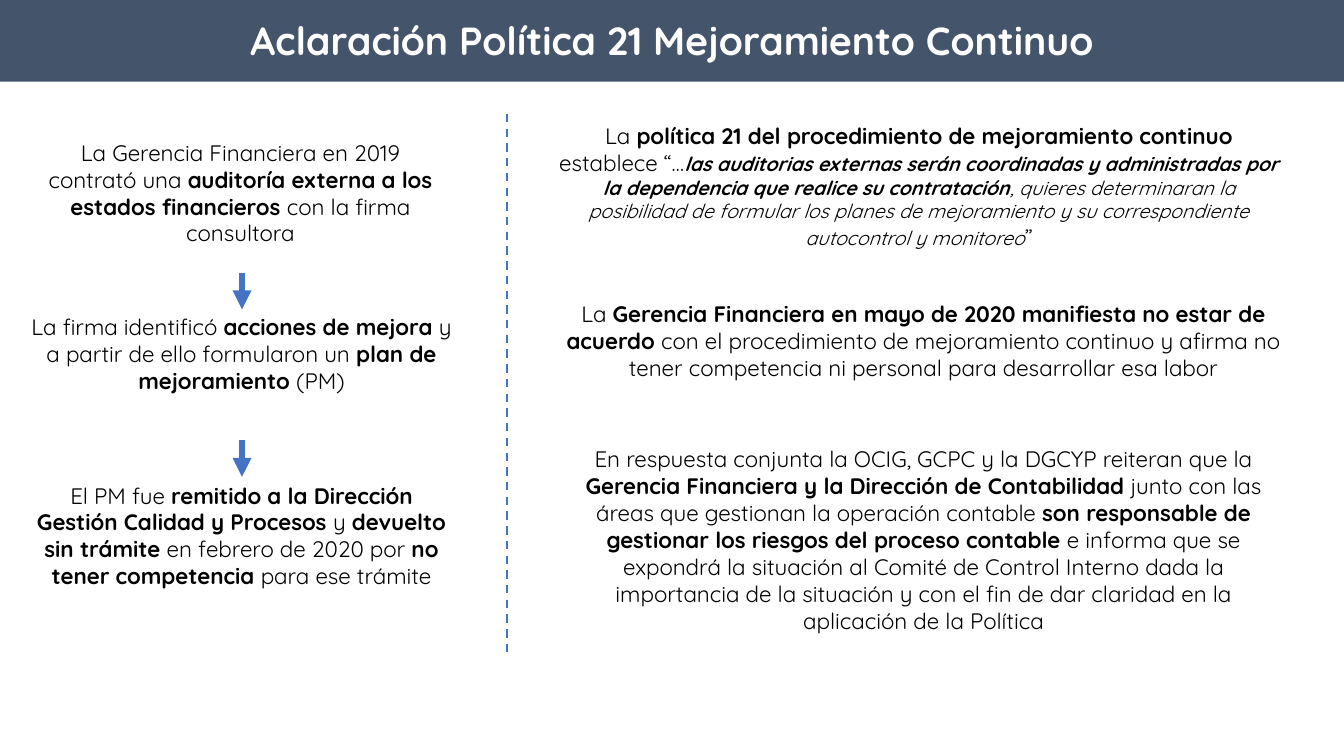
from lxml.etree import SubElement
from pptx import Presentation
from pptx.dml.color import RGBColor
from pptx.enum.dml import MSO_LINE
from pptx.enum.shapes import MSO_CONNECTOR
from pptx.enum.text import MSO_ANCHOR, MSO_AUTO_SIZE, PP_ALIGN
from pptx.oxml.ns import qn
from pptx.util import Inches, Pt

SLATE = RGBColor(0x44, 0x54, 0x6A)
BLUE = RGBColor(0x44, 0x72, 0xC4)
BLACK = RGBColor(0, 0, 0)
WHITE = RGBColor(255, 255, 255)
FONT = "Quicksand"


def add_run(paragraph, text, size, color, bold, italic=False):
    run = paragraph.add_run()
    run.text = text
    run.font.name = FONT
    run.font.size = Pt(size)
    run.font.color.rgb = color
    run.font.bold = bold
    run.font.italic = italic


def add_line(slide, x, top, bottom, width):
    line = slide.shapes.add_connector(
        MSO_CONNECTOR.STRAIGHT, Inches(x), Inches(top), Inches(x), Inches(bottom))
    line.line.color.rgb = BLUE
    line.line.width = Pt(width)
    SubElement(line._element.spPr, qn("a:effectLst"))
    return line


prs = Presentation()
prs.slide_width = Inches(13.33)
prs.slide_height = Inches(7.5)
slide = prs.slides.add_slide(prs.slide_layouts[5])

title = slide.shapes.title
title.left, title.top = Inches(0), Inches(-0.01)
title.width, title.height = Inches(13.33), Inches(0.82)
title.fill.solid()
title.fill.fore_color.rgb = SLATE
title.text_frame.vertical_anchor = MSO_ANCHOR.MIDDLE
title.text_frame.auto_size = MSO_AUTO_SIZE.NONE
heading = title.text_frame.paragraphs[0]
heading.alignment = PP_ALIGN.CENTER
add_run(heading, "Aclaración Política 21 Mejoramiento Continuo", 28, WHITE, True)

PLAIN = (16, BLACK, False)
STRONG = (16, BLACK, True)
QUOTE = (14, BLACK, False, True)
STRONG_QUOTE = (14, BLACK, True, True)

statements = [
    (0.31, 1.33, 4.15, 1.18, [
        ("La Gerencia Financiera en 2019 contrató una ", PLAIN),
        ("auditoría externa a los estados financieros ", STRONG),
        ("con la firma consultora", PLAIN)]),
    (0.2, 3.06, 4.39, 0.91, [
        ("La firma identificó ", PLAIN),
        ("acciones de mejora ", STRONG),
        ("y a partir de ello formularon un ", PLAIN),
        ("plan de mejoramiento ", STRONG),
        ("(PM)", PLAIN)]),
    (0.2, 4.73, 4.39, 1.18, [
        ("El PM fue ", PLAIN),
        ("remitido a la Dirección Gestión Calidad y Procesos ", STRONG),
        ("y ", PLAIN),
        ("devuelto sin trámite ", STRONG),
        ("en febrero de 2020 por ", PLAIN),
        ("no tener competencia ", STRONG),
        ("para ese trámite", PLAIN)]),
    (5.42, 1.16, 7.39, 1.41, [
        ("La ", PLAIN),
        ("política 21 del procedimiento de mejoramiento continuo ", STRONG),
        ("establece “…", PLAIN),
        ("las auditorias externas serán coordinadas y administradas por "
         "la dependencia que realice su contratación", STRONG_QUOTE),
        (", quieres determinaran la posibilidad de formular los planes de "
         "mejoramiento y su correspondiente autocontrol y monitoreo", QUOTE),
        ("”", PLAIN)]),
    (5.51, 2.93, 7.3, 1.18, [
        ("La ", PLAIN),
        ("Gerencia Financiera en mayo de 2020 manifiesta no estar de acuerdo ", STRONG),
        ("con el procedimiento de mejoramiento continuo y afirma no tener "
         "competencia ni personal para desarrollar esa labor", PLAIN)]),
    (5.61, 4.37, 7.1, 1.99, [
        ("En respuesta conjunta la OCIG, GCPC y la DGCYP reiteran que la ", PLAIN),
        ("Gerencia Financiera y la Dirección de Contabilidad ", STRONG),
        ("junto con las áreas que gestionan la operación contable ", PLAIN),
        ("son responsable de gestionar los riesgos del proceso contable ", STRONG),
        ("e informa que se expondrá la situación al Comité de Control Interno "
         "dada la importancia de la situación y con el fin de dar claridad en "
         "la aplicación de la Política", PLAIN)]),
]
for left, top, width, height, phrases in statements:
    statement = slide.shapes.add_textbox(
        Inches(left), Inches(top), Inches(width), Inches(height)).text_frame
    statement.word_wrap = True
    statement.auto_size = MSO_AUTO_SIZE.SHAPE_TO_FIT_TEXT
    paragraph = statement.paragraphs[0]
    paragraph.alignment = PP_ALIGN.CENTER
    for text, style in phrases:
        add_run(paragraph, text, *style)

for step_top in (2.71, 4.37):
    step_arrow = add_line(slide, 2.4, step_top, step_top + 0.36, 4.5)
    SubElement(step_arrow.line._get_or_add_ln(), qn("a:tailEnd"), type="triangle")

divider = add_line(slide, 5.03, 1.13, 6.51, 1.5)
divider.line.dash_style = MSO_LINE.DASH

prs.save("out.pptx")
